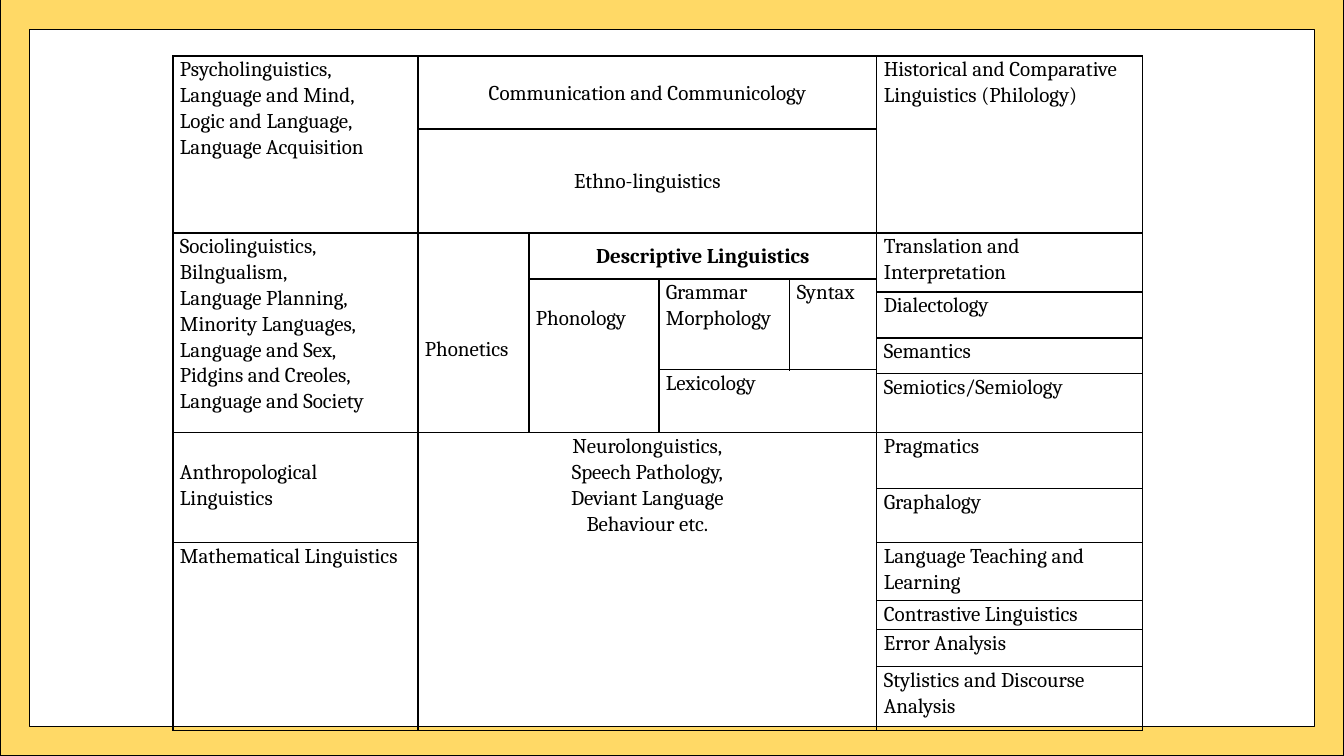
from dataclasses import dataclass

from lxml import etree
from pptx import Presentation
from pptx import util as u
from pptx.dml.color import RGBColor
from pptx.enum import shapes, text
from pptx.oxml.ns import qn
from pptx.slide import Slide
from pptx.table import Table, _Cell

SLIDE_WIDTH, SLIDE_HEIGHT = 1344, 756
EMU_PER_PX = 12192000 / SLIDE_WIDTH


@dataclass(frozen=True)
class Theme:
    frame: str = "FFD966"
    ink: str = "000000"
    font: str = "Cambria"
    text_size: float = 15
    line_spacing: float = 1.07
    frame_line: float = 0.75
    cell_line: float = 1
    side_margin: int = 7


@dataclass(frozen=True)
class Field:
    """A cell of the map of linguistics; lengths in px, spans in cells."""
    row: int
    column: int
    lines: str
    rows: int = 1
    columns: int = 1
    top_margin: int = 0
    centred: bool = False
    middle: bool = False
    bold: bool = False


THEME = Theme()
TABLE_LEFT, TABLE_TOP = 173, 56
COLUMN_WIDTHS = [245, 111, 130, 131, 87, 266]
ROW_HEIGHTS = [73, 104, 46, 13, 46, 32, 4, 59, 56, 54, 58, 29, 37, 64]

FIELDS = [
    # Left column
    Field(0, 0, "Psycholinguistics,\nLanguage and Mind,\n"
                "Logic and Language, Language Acquisition", rows=2),
    Field(2, 0, "Sociolinguistics,\nBilngualism,\nLanguage Planning,\n"
                "Minority Languages,\nLanguage and Sex,\n"
                "Pidgins and Creoles,\nLanguage and Society", rows=6),
    Field(8, 0, "Anthropological Linguistics", rows=2, top_margin=26),
    Field(10, 0, "Mathematical Linguistics", rows=4),
    # Centre
    Field(0, 1, "Communication and Communicology", columns=4, centred=True, middle=True),
    Field(1, 1, "Ethno-linguistics", columns=4, centred=True, middle=True),
    Field(2, 1, "Phonetics", rows=6, top_margin=103),
    Field(2, 2, "Descriptive Linguistics", columns=3, centred=True, middle=True, bold=True),
    Field(3, 2, "Phonology", rows=5, top_margin=26),
    Field(3, 3, "Grammar\nMorphology", rows=3),
    Field(3, 4, "Syntax", rows=3),
    Field(6, 3, "Lexicology", rows=2, columns=2),
    Field(8, 1, "Neurolonguistics,\nSpeech Pathology,\nDeviant Language\n"
                "Behaviour etc.", rows=6, columns=4, centred=True),
    # Right column
    Field(0, 5, "Historical and Comparative Linguistics (Philology)", rows=2),
    Field(2, 5, "Translation and Interpretation", rows=2),
    Field(4, 5, "Dialectology"),
    Field(5, 5, "Semantics", rows=2),
    Field(7, 5, "Semiotics/Semiology"),
    Field(8, 5, "Pragmatics"),
    Field(9, 5, "Graphalogy"),
    Field(10, 5, "Language Teaching and Learning"),
    Field(11, 5, "Contrastive Linguistics"),
    Field(12, 5, "Error Analysis"),
    Field(13, 5, "Stylistics and Discourse Analysis"),
]


def px(length: int) -> u.Emu:
    return u.Emu(round(length * EMU_PER_PX))


def color(value: str) -> RGBColor:
    return RGBColor.from_string(value)


def draw_frame(slide: Slide) -> None:
    frame = slide.shapes.add_shape(
        shapes.MSO_SHAPE.FRAME, 0, 0, px(SLIDE_WIDTH), px(SLIDE_HEIGHT))
    frame.adjustments[0] = 0.039
    frame.shadow.inherit = False
    frame.fill.solid()
    frame.fill.fore_color.rgb = color(THEME.frame)
    frame.line.color.rgb = color(THEME.ink)
    frame.line.width = u.Pt(THEME.frame_line)


def set_borders(cell: _Cell) -> None:
    properties = cell._tc.get_or_add_tcPr()
    for position, side in enumerate(("lnL", "lnR", "lnT", "lnB")):
        line = etree.Element(qn(f"a:{side}"), w=str(u.Pt(THEME.cell_line)))
        fill = etree.SubElement(line, qn("a:solidFill"))
        etree.SubElement(fill, qn("a:srgbClr"), val=THEME.ink)
        properties.insert(position, line)


def draw_field(table: Table, field: Field) -> None:
    cell = table.cell(field.row, field.column)
    if field.rows > 1 or field.columns > 1:
        cell.merge(table.cell(field.row + field.rows - 1,
                              field.column + field.columns - 1))
    cell.text = field.lines
    cell.margin_top = px(field.top_margin)
    if field.middle:
        cell.vertical_anchor = text.MSO_ANCHOR.MIDDLE
    for paragraph in cell.text_frame.paragraphs:
        paragraph.line_spacing = THEME.line_spacing
        if field.centred:
            paragraph.alignment = text.PP_ALIGN.CENTER
        paragraph.font.name = THEME.font
        paragraph.font.size = u.Pt(THEME.text_size)
        paragraph.font.bold = field.bold
        paragraph.font.color.rgb = color(THEME.ink)


def draw_table(slide: Slide) -> None:
    table = slide.shapes.add_table(
        len(ROW_HEIGHTS), len(COLUMN_WIDTHS), px(TABLE_LEFT), px(TABLE_TOP),
        px(sum(COLUMN_WIDTHS)), px(sum(ROW_HEIGHTS))).table
    table.first_row = table.horz_banding = False
    for column, width in zip(table.columns, COLUMN_WIDTHS):
        column.width = px(width)
    for row, height in zip(table.rows, ROW_HEIGHTS):
        row.height = px(height)
    for cell in table.iter_cells():
        cell.margin_left = cell.margin_right = px(THEME.side_margin)
        cell.margin_top = cell.margin_bottom = 0
        cell.fill.background()
        set_borders(cell)
    for field in FIELDS:
        draw_field(table, field)


def main() -> None:
    presentation = Presentation()
    presentation.slide_width = px(SLIDE_WIDTH)
    presentation.slide_height = px(SLIDE_HEIGHT)
    slide = presentation.slides.add_slide(presentation.slide_layouts[6])
    draw_frame(slide)
    draw_table(slide)
    presentation.save("out.pptx")


if __name__ == "__main__":
    main()
